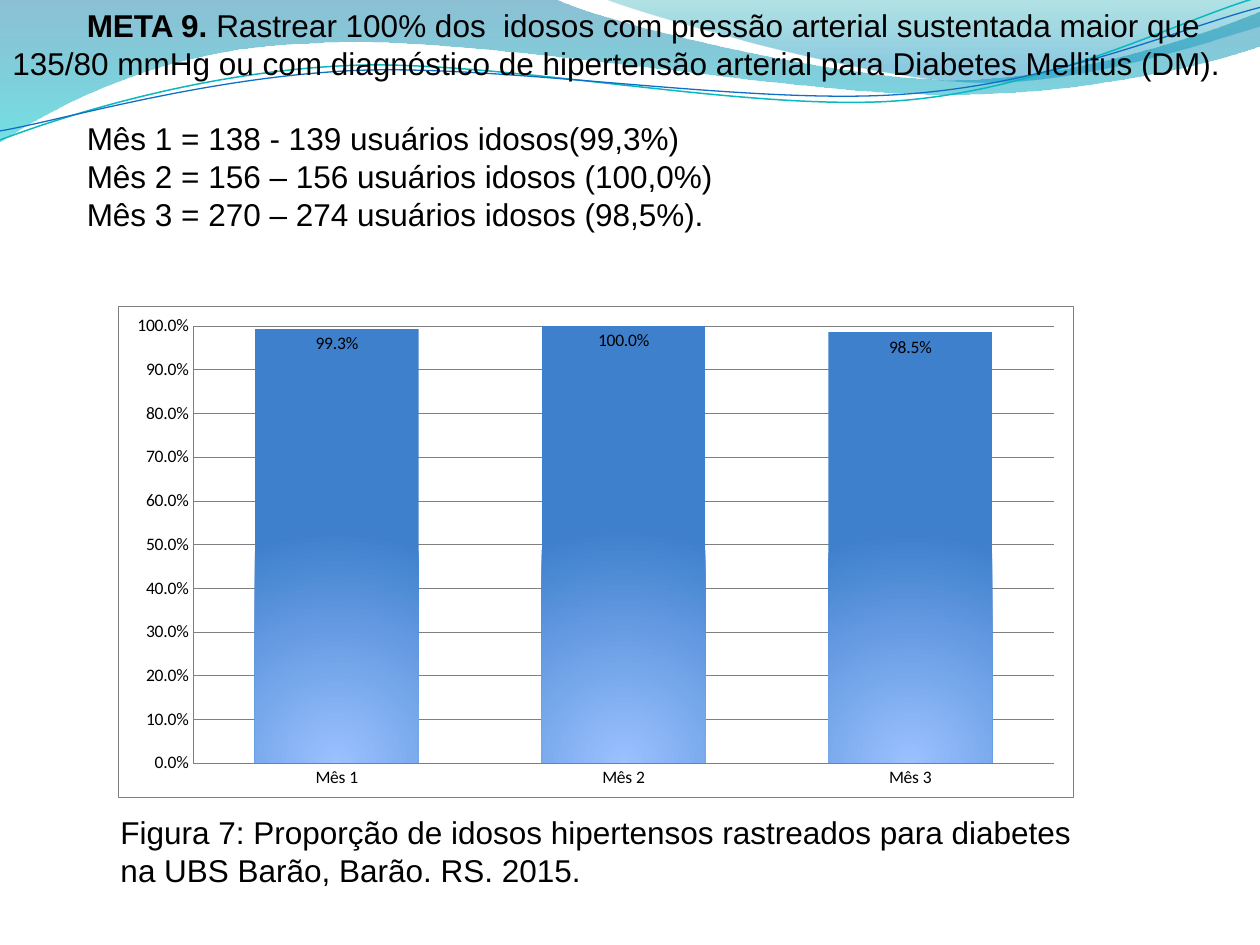
import math
from collections import namedtuple
from dataclasses import dataclass

from pptx import Presentation
from pptx import util as u
from pptx.chart import data as chart_data
from pptx.dml import color
from pptx.enum import chart as ce
from pptx.enum import text
from pptx.oxml import ns, parse_xml

Box = namedtuple("Box", "left top width height")


@dataclass(frozen=True)
class Theme:
    """Colours, fonts and type sizes of the slide."""
    ink: str = "000000"
    paper: str = "FFFFFF"
    grid: str = "808080"
    teal: str = "0AB8BF"
    blue: str = "0F6FC6"
    wave_main: tuple = ((0, "0074A1", 45), (100, "00C6CF", 55))
    wave_right: tuple = ((0, "00A1A9", 30), (80, "008BBF", 45))
    bar: tuple = ((0, "9BC1FF", 100), (100, "3F80CD", 100))
    body_font: str = "Arial"
    chart_font: str = "Calibri"
    body_size: float = 18
    chart_size: float = 10
    hairline: float = 0.25


THEME = Theme()
DOWNWARD = '<a:lin ang="5400000" scaled="1"/>'
FROM_BASE = '<a:path path="circle"><a:fillToRect l="50000" t="100000" r="50000"/></a:path>'
STRAND_TILT = -2.7

WAVES = (
    (THEME.wave_main, (
        ((0, 0),), ((11.18, -0.03),),
        ((12.09, 0.43), (16.87, 1.6), (19.25, 1.6)),
        ((21.67, 1.6), (24.33, 0.66), (25.4, 0.23)), ((25.43, 0.91),),
        ((24.97, 1.12), (22.1, 1.93), (18.95, 1.9)),
        ((15.8, 1.9), (9.7, 0.71), (6.53, 0.86)),
        ((3.28, 0.91), (1.17, 2.11), (-0.03, 2.87)))),
    (THEME.wave_right, (
        ((12.17, -0.03),),
        ((12.93, 0.28), (17.32, 1.57), (19.53, 1.65)),
        ((21.74, 1.75), (24.41, 0.81), (25.4, 0.53)), ((25.4, 0),))),
)
STRANDS = (
    (THEME.teal, 0.85, (12.67, 1.46), (
        ((0, 2.82),),
        ((1.22, 2.36), (4.01, 1.45), (7.04, 1.32)),
        ((10.03, 1.19), (15.06, 2.26), (18.11, 2.03)),
        ((21.16, 1.8), (23.83, 0.38), (25.35, -0.05)))),
    (THEME.blue, 0.75, (12.69, 1.5), (
        ((0, 2.64),),
        ((1.19, 2.44), (4.17, 1.55), (7.19, 1.42)),
        ((10.24, 1.3), (15.16, 2.13), (18.21, 1.9)),
        ((21.23, 1.7), (23.9, 0.53), (25.4, 0.15)))),
)

GOAL = ("META 9. ", "Rastrear 100% dos  idosos com pressão arterial sustentada maior que "
        "135/80 mmHg ou com diagnóstico de hipertensão arterial para Diabetes Mellitus (DM).")
MONTHS = ("Mês 1 = 138 - 139 usuários idosos(99,3%)",
          "Mês 2 = 156 – 156 usuários idosos (100,0%)",
          "Mês 3 = 270 – 274 usuários idosos (98,5%).")
CAPTION = ("Figura 7: Proporção de idosos hipertensos rastreados para diabetes "
           "na UBS Barão, Barão. RS. 2015.")
RATES = {"Mês 1": 0.993, "Mês 2": 1, "Mês 3": 0.985}


def rgb(value):
    """Return a colour object for a hex value."""
    return color.RGBColor.from_string(value)


def set_gradient(fill, element, stops, direction):
    """Give the element's fill a gradient of (position, colour, opacity) stops."""
    fill.background()
    marks = "".join(
        f'<a:gs pos="{position * 1000}"><a:srgbClr val="{value}">'
        f'<a:alpha val="{opacity * 1000}"/></a:srgbClr></a:gs>'
        for position, value, opacity in stops)
    gradient = parse_xml(f'<a:gradFill {ns.nsdecls("a")} rotWithShape="1">'
                         f"<a:gsLst>{marks}</a:gsLst>{direction}</a:gradFill>")
    empty = element.find(".//" + ns.qn("a:noFill"))
    empty.getparent().replace(empty, gradient)


def turn(segments, centre, degrees):
    """Rotate all points of the segments clockwise around the centre."""
    cosine, sine = math.cos(math.radians(degrees)), math.sin(math.radians(degrees))
    middle_x, middle_y = centre
    return [[(middle_x + (x - middle_x) * cosine - (y - middle_y) * sine,
              middle_y + (x - middle_x) * sine + (y - middle_y) * cosine)
             for x, y in segment] for segment in segments]


def add_outline(shapes, box, segments, close):
    """Draw a freeform of straight and cubic segments relative to the box."""
    placed = [[(u.Cm(box.left + x), u.Cm(box.top + y)) for x, y in segment]
              for segment in segments]
    ends = [segment[-1] for segment in placed]
    builder = shapes.build_freeform(*ends[0])
    builder.add_line_segments(ends[1:], close=close)
    shape = builder.convert_to_shape()
    shape.shadow.inherit = False
    left, top = (min(values) for values in zip(*ends))
    lines = list(shape.element.iter(ns.qn("a:lnTo")))
    for line, segment in zip(lines, placed[1:]):
        if len(segment) == 3:
            points = "".join(f'<a:pt x="{x - left}" y="{y - top}"/>' for x, y in segment)
            curve = parse_xml(f'<a:cubicBezTo {ns.nsdecls("a")}>{points}</a:cubicBezTo>')
            line.getparent().replace(line, curve)
    return shape


def add_header_waves(slide, box):
    """Draw the translucent waves and the group of two thin strands."""
    for stops, segments in WAVES:
        shape = add_outline(slide.shapes, box, segments, True)
        set_gradient(shape.fill, shape.element, stops, DOWNWARD)
        shape.line.fill.background()
    group = slide.shapes.add_group_shape()
    for value, width, centre, segments in STRANDS:
        level = turn(segments, centre, -STRAND_TILT)
        shape = add_outline(group.shapes, box, level, False)
        shape.rotation = STRAND_TILT
        shape.fill.background()
        shape.line.color.rgb = rgb(value)
        shape.line.width = u.Pt(width)


def style_font(font, name, size):
    """Apply the ink colour, a typeface and a size."""
    font.name = name
    font.size = u.Pt(size)
    font.color.rgb = rgb(THEME.ink)


def add_text(slide, box, lines):
    """Add a wrapping text box with one paragraph per line."""
    frame = slide.shapes.add_textbox(*map(u.Cm, box)).text_frame
    frame.word_wrap = True
    frame.auto_size = text.MSO_AUTO_SIZE.SHAPE_TO_FIT_TEXT
    frame.text = "\n".join(lines)
    for paragraph in frame.paragraphs:
        for run in paragraph.runs:
            style_font(run.font, THEME.body_font, THEME.body_size)
    return frame


def add_goal(slide, box):
    """Place the goal and its monthly results."""
    title, description = GOAL
    frame = add_text(slide, box, (title, *MONTHS))
    goal, first_month = frame.paragraphs[:2]
    goal.runs[0].font.bold = True
    run = goal.add_run()
    run.text = description
    style_font(run.font, THEME.body_font, THEME.body_size)
    first_month.space_before = u.Pt(21.5)
    for paragraph in frame.paragraphs:
        properties = paragraph._p.get_or_add_pPr()
        properties.set("marL", "0")
        properties.set("indent", str(u.Cm(1.5)))


def style_line(line):
    """Make a line a grey hairline."""
    line.color.rgb = rgb(THEME.grid)
    line.width = u.Pt(THEME.hairline)


def area_format(border):
    """Return chart area properties with a plain fill and the given line content."""
    return parse_xml(
        f'<c:spPr {ns.nsdecls("c", "a")}><a:solidFill><a:srgbClr val="{THEME.paper}"/></a:solidFill>'
        f'<a:ln w="{u.Pt(THEME.hairline)}">{border}</a:ln></c:spPr>')


def add_rate_chart(slide, box):
    """Place the column chart of monthly rates."""
    data = chart_data.CategoryChartData(number_format="0.0%")
    data.categories = RATES.keys()
    data.add_series("Series 1", RATES.values())
    chart = slide.shapes.add_chart(
        ce.XL_CHART_TYPE.COLUMN_CLUSTERED, *map(u.Cm, box), data).chart
    chart.has_legend = chart.has_title = False
    style_font(chart.font, THEME.chart_font, THEME.chart_size)
    area = chart.element.find(ns.qn("c:chart"))
    area.addnext(area_format(f'<a:solidFill><a:srgbClr val="{THEME.grid}"/></a:solidFill>'))
    area.find(ns.qn("c:plotArea")).append(area_format("<a:noFill/>"))
    for axis in (chart.category_axis, chart.value_axis):
        axis.major_tick_mark = axis.minor_tick_mark = ce.XL_TICK_MARK.NONE
        style_font(axis.tick_labels.font, THEME.chart_font, THEME.chart_size)
        style_line(axis.format.line)
    scale = chart.value_axis
    scale.minimum_scale, scale.maximum_scale, scale.major_unit = 0, 1, 0.1
    scale.tick_labels.number_format = "0.0%"
    scale.tick_labels.number_format_is_linked = False
    style_line(scale.major_gridlines.format.line)
    plot = chart.plots[0]
    plot.gap_width, plot.overlap, plot.vary_by_categories = 75, 40, False
    series = plot.series[0]
    set_gradient(series.format.fill, series._element, THEME.bar, FROM_BASE)
    labels = series.data_labels
    labels.show_value = True
    labels.position = ce.XL_LABEL_POSITION.INSIDE_END
    labels.number_format, labels.number_format_is_linked = "0.0%", False
    style_font(labels.font, THEME.chart_font, THEME.chart_size)


def main():
    """Build and save the slide."""
    presentation = Presentation()
    presentation.slide_width, presentation.slide_height = u.Cm(25.4), u.Cm(19.05)
    slide = presentation.slides.add_slide(presentation.slide_layouts[6])
    add_header_waves(slide, Box(0, 0, 25.4, 2.9))
    add_goal(slide, Box(0, 0, 25.4, 5.64))
    add_text(slide, Box(2.18, 16.27, 20.45, 1.8), (CAPTION,))
    add_rate_chart(slide, Box(2.38, 6.17, 19.25, 9.91))
    presentation.save("out.pptx")


if __name__ == "__main__":
    main()
